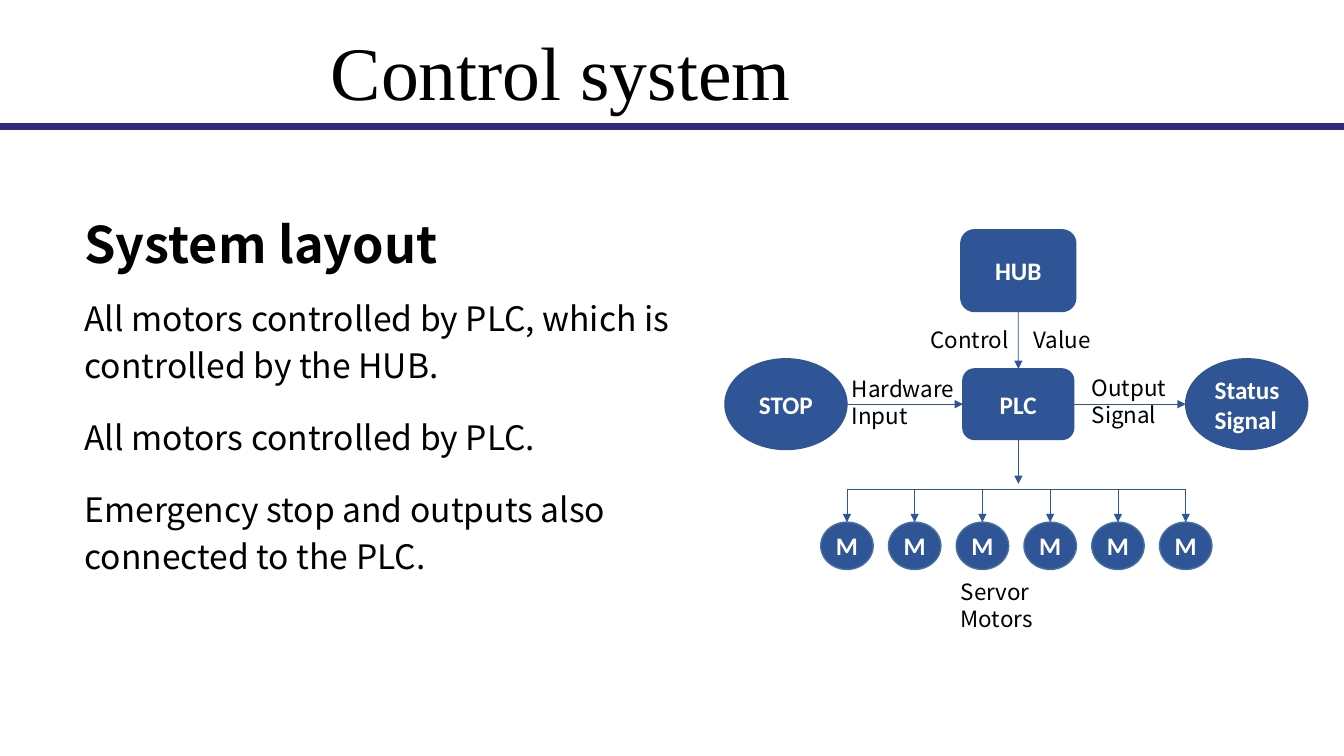
from lxml import etree
from pptx import Presentation
from pptx import util as u
from pptx.dml.color import RGBColor
from pptx.enum import shapes, text
from pptx.oxml.ns import qn

COLORS = {"ink": "000000", "light": "FFFFFF", "rule": "302A84",
          "node": "2F5597", "oval_edge": "325491", "motor_edge": "43739E"}
SANS, SERIF, NODE_FONT = "Noto Sans CJK SC", "Times New Roman", "Calibri"

TITLE = "Control system"
HEADING = "System layout"
POINTS = ["All motors controlled by PLC, which is controlled by the HUB.",
          "All motors controlled by PLC.",
          "Emergency stop and outputs also connected to the PLC."]

NODES = {
    "HUB": ("ROUNDED_RECTANGLE", "node", 9.53, 2.28, 1.14, 0.81),
    "PLC": ("ROUNDED_RECTANGLE", "node", 9.55, 3.66, 1.1, 0.7),
    "STOP": ("OVAL", "oval_edge", 7.19, 3.56, 1.21, 0.9),
    "Status\nSignal": ("OVAL", "oval_edge", 11.76, 3.56, 1.21, 0.9),
}
LABELS = [
    ("Control\tValue", 9.13, 3.19, 2.01, 0.37),
    ("Hardware Input", 8.35, 3.67, 1.22, 0.64),
    ("Output\nSignal", 10.73, 3.66, 0.94, 0.64),
    ("Servor Motors", 9.43, 5.69, 1.58, 0.37),
]
MOTOR_COUNT, MOTOR_FIRST, MOTOR_LAST = 6, 8.4, 11.76
MOTOR_TOP, MOTOR_WIDTH, MOTOR_HEIGHT = 5.18, 0.52, 0.47
BUS_Y, TRUNK_END, SIDE_Y = 4.85, 4.8, 4.01


def color(name):
    return RGBColor.from_string(COLORS[name])


def style(para, font, size, tint, bold=False):
    for span in para.runs:
        span.font.name = font
        span.font.size = u.Pt(size)
        span.font.bold = bold
        span.font.color.rgb = color(tint)


def add_block(kind, fill, edge, *place):
    shape = page.shapes.add_shape(kind, *map(u.Inches, place))
    shape.shadow.inherit = False
    shape.fill.solid()
    shape.fill.fore_color.rgb = color(fill)
    shape.line.color.rgb = color(edge)
    shape.line.width = u.Pt(1)
    return shape


def add_node(caption, kind, edge, *place):
    shape = add_block(getattr(shapes.MSO_SHAPE, kind), "node", edge, *place)
    frame = shape.text_frame
    frame.text = caption
    frame.word_wrap = True
    frame.vertical_anchor = text.MSO_ANCHOR.MIDDLE
    frame.margin_left = frame.margin_right = frame.margin_top = frame.margin_bottom = 0
    several = len(frame.paragraphs) > 1
    if several:
        frame.margin_left = u.Inches(0.11)
    for para in frame.paragraphs:
        para.alignment = text.PP_ALIGN.LEFT if several else text.PP_ALIGN.CENTER
        style(para, NODE_FONT, 18, "light", True)
    return shape


def add_line(start, end, arrow=True):
    line = page.shapes.add_connector(shapes.MSO_CONNECTOR.STRAIGHT,
                                     *map(u.Inches, start + end))
    line.line.color.rgb = color("node")
    line.line.width = u.Pt(0.5)
    if arrow:
        etree.SubElement(line.line._get_or_add_ln(), qn("a:tailEnd"), type="triangle")
    etree.SubElement(line._element.spPr, qn("a:effectLst"))
    return line


def add_text(content, *place):
    box = page.shapes.add_textbox(*map(u.Inches, place))
    box.text_frame.word_wrap = True
    box.text_frame.text = content
    return box.text_frame.paragraphs


deck = Presentation()
deck.slide_width, deck.slide_height = u.Inches(13.33), u.Inches(7.5)
page = deck.slides.add_slide(deck.slide_layouts[5])

add_block(shapes.MSO_SHAPE.RECTANGLE, "rule", "rule", 0, 1.23, 13.33, 0.05)

title = page.shapes.title
title.left, title.top, title.width, title.height = map(u.Inches, (3.18, 0.41, 7.65, 0.68))
title.text_frame.text = TITLE
title.text_frame.auto_size = text.MSO_AUTO_SIZE.NONE
title.text_frame.vertical_anchor = text.MSO_ANCHOR.MIDDLE
para = title.text_frame.paragraphs[0]
para.alignment = text.PP_ALIGN.LEFT
para.line_spacing = 0.9
style(para, SERIF, 54, "ink")

heading, *points = add_text("\n".join([HEADING] + POINTS), 0.74, 2.13, 6.84, 4.21)
heading.line_spacing = 0.9
style(heading, SANS, 36, "ink", True)
for para in points:
    para.line_spacing = u.Pt(33.6)
    para.space_before, para.space_after = u.Pt(12), u.Pt(6)
    style(para, SANS, 24, "ink")

nodes = {name: add_node(name, *details) for name, details in NODES.items()}

control = add_line((10.1, 3.09), (10.1, 3.66))
control.begin_connect(nodes["HUB"], 2)
control.end_connect(nodes["PLC"], 0)
hardware = add_line((8.4, SIDE_Y), (9.55, SIDE_Y))
hardware.end_connect(nodes["PLC"], 1)
output = add_line((10.65, SIDE_Y), (11.76, SIDE_Y))
output.begin_connect(nodes["PLC"], 3)
trunk = add_line((10.1, 4.36), (10.1, TRUNK_END))
trunk.begin_connect(nodes["PLC"], 2)

add_line((MOTOR_FIRST, BUS_Y), (MOTOR_LAST, BUS_Y), arrow=False)
step = (MOTOR_LAST - MOTOR_FIRST) / (MOTOR_COUNT - 1)
for index in range(MOTOR_COUNT):
    center = MOTOR_FIRST + index * step
    add_node("M", "OVAL", "motor_edge", center - MOTOR_WIDTH / 2, MOTOR_TOP,
             MOTOR_WIDTH, MOTOR_HEIGHT)
    add_line((center, BUS_Y), (center, MOTOR_TOP))

for content, *place in LABELS:
    for para in add_text(content, *place):
        if "\t" in content:
            stops = etree.SubElement(para._p.get_or_add_pPr(), qn("a:tabLst"))
            etree.SubElement(stops, qn("a:tab"), pos=str(u.Inches(1.02)), algn="l")
        style(para, SANS, 16, "ink")

deck.save("out.pptx")
